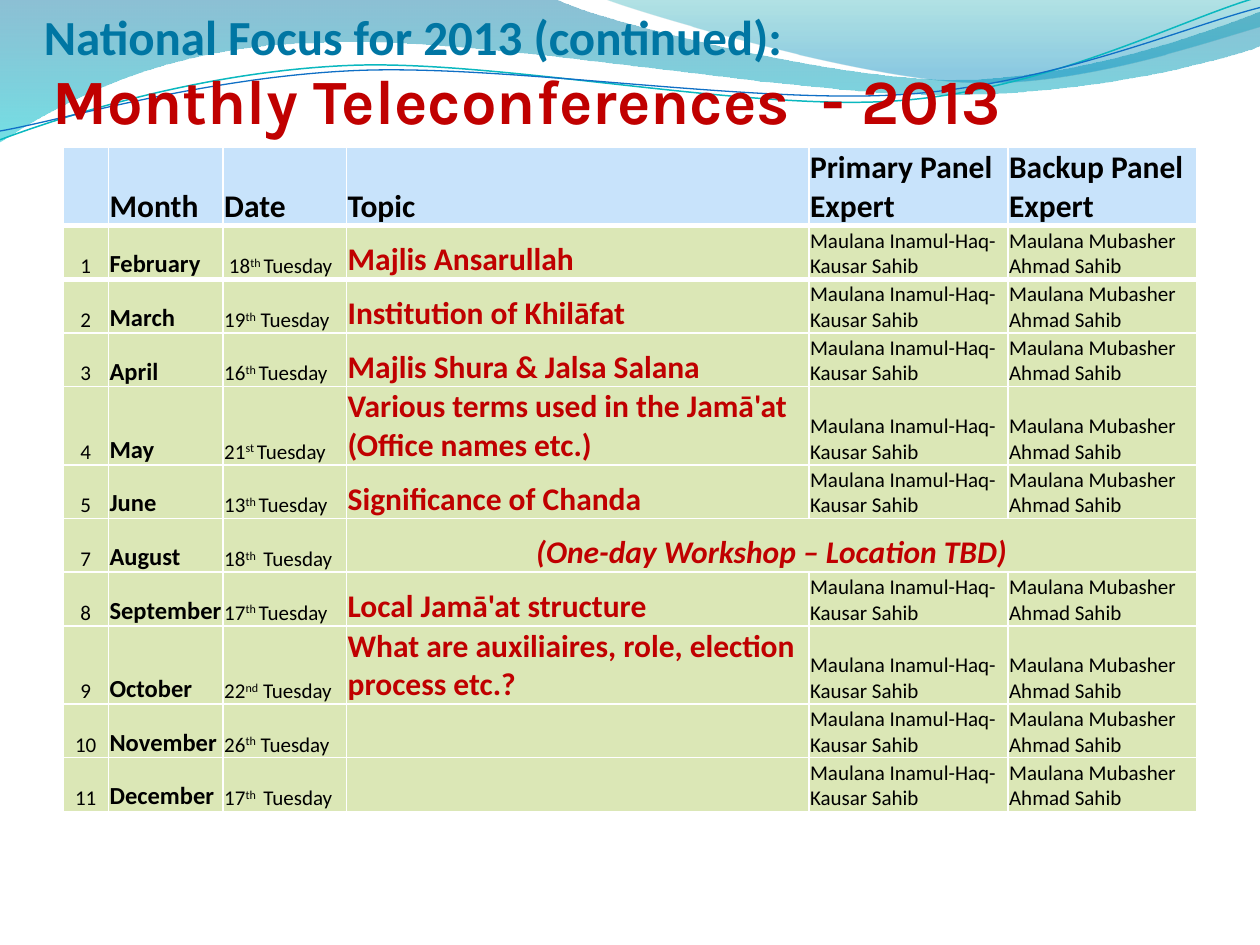
from lxml.etree import SubElement, fromstring
from pptx import Presentation
from pptx.dml.color import RGBColor
from pptx.enum.text import MSO_ANCHOR as Anchor, MSO_AUTO_SIZE as AutoSize, PP_ALIGN as Align
from pptx.oxml.ns import nsdecls, qn
from pptx.util import Inches, Pt

COLORS = {
    "title": "C00000", "heading": "0076A3", "text": "000000",
    "header": "C8E3FB", "row": "DBE7B6", "border": "FFFFFF",
    "deep": "0074A1", "aqua": "00C6CF", "teal": "00A1A9", "sky": "008BBF",
    "teal_line": "0AB8BF", "blue_line": "0F6FC6",
}


def write(para, text, size=12, color="text", font="Calibri", bold=False,
          italic=False, raised=False):
    span = para.add_run()
    span.text = text
    span.font.name = font
    span.font.size = Pt(size)
    span.font.bold = bold
    span.font.italic = italic
    span.font.color.rgb = RGBColor.from_string(COLORS[color])
    if raised:
        span.font._element.set("baseline", "30000")


def add_curve(page, path, close):
    """Draw points (x, y) as corners and (x1, y1, x2, y2, x, y) as Bezier curves."""
    points = [(Inches(segment[i]), Inches(segment[i + 1]))
              for segment in path for i in range(0, len(segment), 2)]
    builder = page.shapes.build_freeform(*points[0])
    builder.add_line_segments(points[1:], close=close)
    shape = builder.convert_to_shape()
    lines = iter(list(shape.element.iter(qn("a:lnTo"))))
    for segment in path[1:]:
        first = next(lines)
        if len(segment) == 6:
            first.tag = qn("a:cubicBezTo")
            for line in (next(lines), next(lines)):
                first.append(line[0])
                line.getparent().remove(line)
    return shape


deck = Presentation()
deck.slide_width, deck.slide_height = Inches(10), Inches(7.5)
page = deck.slides.add_slide(deck.slide_layouts[5])

# Wave bands and lines: path, gradient stops (position, colour, opacity %) or line
waves = [
    ([(0, -0.01), (4.4, -0.01), (4.76, 0.17, 6.64, 0.63, 7.58, 0.63),
      (8.53, 0.63, 9.58, 0.26, 10, 0.09), (10.01, 0.36),
      (9.83, 0.44, 8.7, 0.76, 7.46, 0.75), (6.22, 0.75, 3.82, 0.28, 2.57, 0.34),
      (1.29, 0.35, 0.46, 0.83, -0.01, 1.13), (0, -0.01)],
     [(0, "deep", 45), (1, "aqua", 55)], None),
    ([(4.79, -0.01), (5.09, 0.11, 6.82, 0.62, 7.69, 0.65),
      (8.56, 0.69, 9.61, 0.32, 10, 0.21), (10, 0), (4.79, -0.01)],
     [(0, "teal", 30), (0.8, "sky", 45)], None),
    ([(0, 1.11), (0.48, 0.93, 1.58, 0.57, 2.77, 0.52),
      (3.95, 0.47, 5.93, 0.89, 7.13, 0.8), (8.33, 0.71, 9.38, 0.15, 9.98, -0.02)],
     None, ("teal_line", 0.85)),
    ([(0, 1.04), (0.47, 0.96, 1.64, 0.61, 2.83, 0.56),
      (4.03, 0.51, 5.97, 0.83, 7.17, 0.75), (8.36, 0.67, 9.41, 0.21, 10, 0.06)],
     None, ("blue_line", 0.75)),
]
for path, stops, line in waves:
    wave = add_curve(page, path, close=line is None)
    wave.shadow.inherit = False
    if line:
        wave.fill.background()
        wave.line.color.rgb = RGBColor.from_string(COLORS[line[0]])
        wave.line.width = Pt(line[1])
        continue
    wave.line.fill.background()
    wave.fill.gradient()
    wave.fill.gradient_angle = 270
    for stop, (position, color, _) in zip(wave.fill.gradient_stops, stops):
        stop.position = position
        stop.color.rgb = RGBColor.from_string(COLORS[color])
    for tint, (_, _, opacity) in zip(wave.element.iter(qn("a:srgbClr")), stops):
        SubElement(tint, qn("a:alpha"), val=str(opacity * 1000))

# Title, brought in front of the waves
title = page.shapes.title
title.element.getparent().append(title.element)
title.left, title.top, title.width, title.height = map(Inches, (0.42, 0.42, 9, 0.67))
frame = title.text_frame
frame.auto_size = AutoSize.NONE
frame.vertical_anchor = Anchor.BOTTOM
frame.margin_left = frame.margin_right = frame.margin_bottom = 0
frame.margin_top = Inches(0.05)
frame.paragraphs[0].alignment = Align.LEFT
write(frame.paragraphs[0], "Monthly Teleconferences  - 2013", size=36, color="title",
      font="Karla", bold=True)

# Schedule; the parts of a date are day | raised suffix | weekday
headers = ["", "Month", "Date", "Topic", "Primary Panel Expert", "Backup Panel Expert"]
experts = ["Maulana Inamul-Haq-Kausar Sahib", "Maulana Mubasher Ahmad Sahib"]
workshop = "(One-day Workshop – Location TBD)"
sessions = [
    ("1", "February", " 18|th |Tuesday", "Majlis Ansarullah"),
    ("2", "March", "19|th| Tuesday", "Institution of Khilāfat"),
    ("3", "April", "16|th |Tuesday", "Majlis Shura & Jalsa Salana"),
    ("4", "May", "21|st |Tuesday", "Various terms used in the Jamā'at (Office names etc.)"),
    ("5", "June", "13|th |Tuesday", "Significance of Chanda"),
    ("7", "August", "18|th | Tuesday", workshop),
    ("8", "September", "17|th |Tuesday", "Local Jamā'at structure"),
    ("9", "October", "22|nd| Tuesday", "What are auxiliaires, role, election process etc.?"),
    ("10", "November", "26|th| Tuesday", ""),
    ("11", "December", "17|th | Tuesday", ""),
]
formats = [{}, {"size": 14, "bold": True}, {},
           {"size": 18, "bold": True, "color": "title"}, {}, {}]
widths = [0.36, 0.91, 0.98, 3.67, 1.58, 1.5]
row_count = len(sessions) + 1
table_height = Inches(4.69)
table = page.shapes.add_table(row_count, len(widths), Inches(0.5), Inches(1.17),
                              Inches(9), table_height).table
table.horz_banding = False
for column, width in zip(table.columns, widths):
    column.width = Inches(width)
for row in table.rows:
    row.height = table_height // row_count

for r, texts in enumerate([headers] + [[*session, *experts] for session in sessions]):
    is_workshop = texts[3] == workshop
    for c, text in enumerate(texts):
        cell = table.cell(r, c)
        cell.fill.solid()
        cell.fill.fore_color.rgb = RGBColor.from_string(COLORS["row" if r else "header"])
        cell.vertical_anchor = Anchor.BOTTOM
        cell.margin_left = cell.margin_right = cell.margin_top = Inches(0.01)
        cell.margin_bottom = 0
        if r < 2:  # thick rule between header and first session
            side = "lnT" if r else "lnB"
            cell._tc.tcPr.insert(0, fromstring(
                f'<a:{side} {nsdecls("a")} w="{Pt(3)}"><a:solidFill>'
                f'<a:srgbClr val="{COLORS["border"]}"/></a:solidFill></a:{side}>'))
        if not text or (is_workshop and c > 3):
            continue
        para = cell.text_frame.paragraphs[0]
        centered = r and (c == 0 or (is_workshop and c == 3))
        para.alignment = Align.CENTER if centered else Align.LEFT
        if r == 0:
            write(para, text, size=18, bold=True)
            continue
        for index, part in enumerate(text.split("|")):
            write(para, part, raised=index == 1, italic=is_workshop and c == 3, **formats[c])
    if is_workshop:
        table.cell(r, 3).merge(table.cell(r, 5))

heading = page.shapes.add_textbox(Inches(0.25), 0, Inches(9.5), Inches(0.57))
heading.text_frame.word_wrap = True
heading.text_frame.auto_size = AutoSize.SHAPE_TO_FIT_TEXT
write(heading.text_frame.paragraphs[0], "National Focus for 2013 (continued):", size=28,
      color="heading", bold=True)

deck.save("out.pptx")
